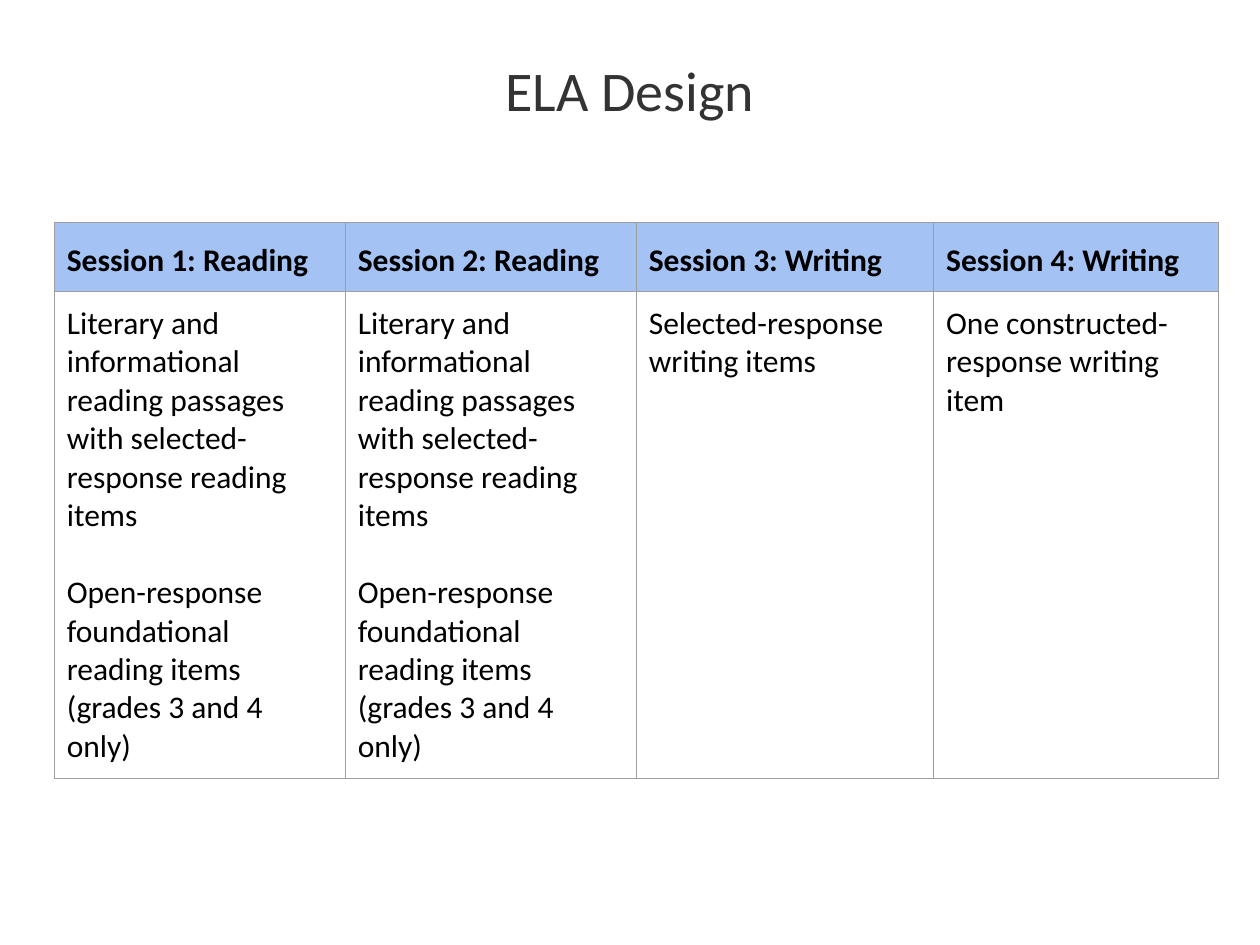
from lxml import etree
from pptx import Presentation
from pptx.dml.color import RGBColor
from pptx.enum.text import MSO_ANCHOR, PP_ALIGN
from pptx.oxml.ns import qn
from pptx.util import Pt

CENTER = PP_ALIGN.CENTER
MIDDLE = MSO_ANCHOR.MIDDLE
TITLE_GRAY = RGBColor(0x33, 0x33, 0x33)
BLACK = RGBColor(0, 0, 0)
HEADER_BLUE = RGBColor(0xA4, 0xC2, 0xF4)
BORDER_GRAY = RGBColor(0x9E, 0x9E, 0x9E)
FONT = "Calibri"
INSET = Pt(7.2)
LINE_HEIGHT = Pt(22)

READING = [
    "Literary and informational reading passages with selected-response reading items",
    "Open-response foundational reading items (grades 3 and 4 only)",
]
SESSIONS = [
    # heading, paragraphs, column width
    ("Session 1: Reading", READING, 166.3),
    ("Session 2: Reading", READING, 166.3),
    ("Session 3: Writing", ["Selected-response writing items"], 169.9),
    ("Session 4: Writing", ["One constructed-response writing item"], 162.7),
]
HEADER_HEIGHT = 39.4


def set_margins(target):
    target.margin_left = target.margin_right = INSET
    target.margin_top = target.margin_bottom = INSET


def format_paragraph(paragraph, size, color, bold=False):
    font = paragraph.font
    for item in (font, *(run.font for run in paragraph.runs)):
        item.name = FONT
        item.size = Pt(size)
        item.bold = bold
        item.color.rgb = color


def add_title(slide, text, left, top, width, height):
    box = slide.shapes.add_textbox(Pt(left), Pt(top), Pt(width), Pt(height))
    text_frame = box.text_frame
    text_frame.word_wrap = True
    text_frame.vertical_anchor = MIDDLE
    set_margins(text_frame)
    text_frame.text = text
    paragraph = text_frame.paragraphs[0]
    paragraph.alignment = CENTER
    format_paragraph(paragraph, 32, TITLE_GRAY)


def add_borders(cell):
    properties = cell._tc.get_or_add_tcPr()
    for side in ("a:lnL", "a:lnR", "a:lnT", "a:lnB"):
        line = etree.SubElement(properties, qn(side), w=str(Pt(0.75)))
        fill = etree.SubElement(line, qn("a:solidFill"))
        etree.SubElement(fill, qn("a:srgbClr"), val=str(BORDER_GRAY))


def fill_cell(cell, paragraphs, header=False):
    add_borders(cell)
    set_margins(cell)
    if header:
        cell.fill.solid()
        cell.fill.fore_color.rgb = HEADER_BLUE
    else:
        cell.fill.background()
    cell.text_frame.text = "\n".join(paragraphs)
    for index, paragraph in enumerate(cell.text_frame.paragraphs):
        paragraph.line_spacing = 1.15 if header else 1.0
        if index:
            paragraph.space_before = LINE_HEIGHT
        format_paragraph(paragraph, 18, BLACK, bold=header)


def add_session_table(slide, left, top, width, height):
    frame = slide.shapes.add_table(
        2, len(SESSIONS), Pt(left), Pt(top), Pt(width), Pt(height))
    table = frame.table
    table.first_row = False
    table.horz_banding = False
    table.rows[0].height = Pt(HEADER_HEIGHT)
    table.rows[1].height = Pt(height - HEADER_HEIGHT)
    for column, (heading, paragraphs, column_width) in enumerate(SESSIONS):
        table.columns[column].width = Pt(column_width)
        fill_cell(table.cell(0, column), [heading], header=True)
        fill_cell(table.cell(1, column), paragraphs)


def main():
    presentation = Presentation()
    presentation.slide_width = Pt(720)
    presentation.slide_height = Pt(540)
    slide = presentation.slides.add_slide(presentation.slide_layouts[6])

    # Title across the top
    add_title(slide, "ELA Design", 0, 0, 720, 102.2)
    # Session overview
    add_session_table(slide, 31, 127.4, 665.2, 317.7)

    presentation.save("out.pptx")


if __name__ == "__main__":
    main()
